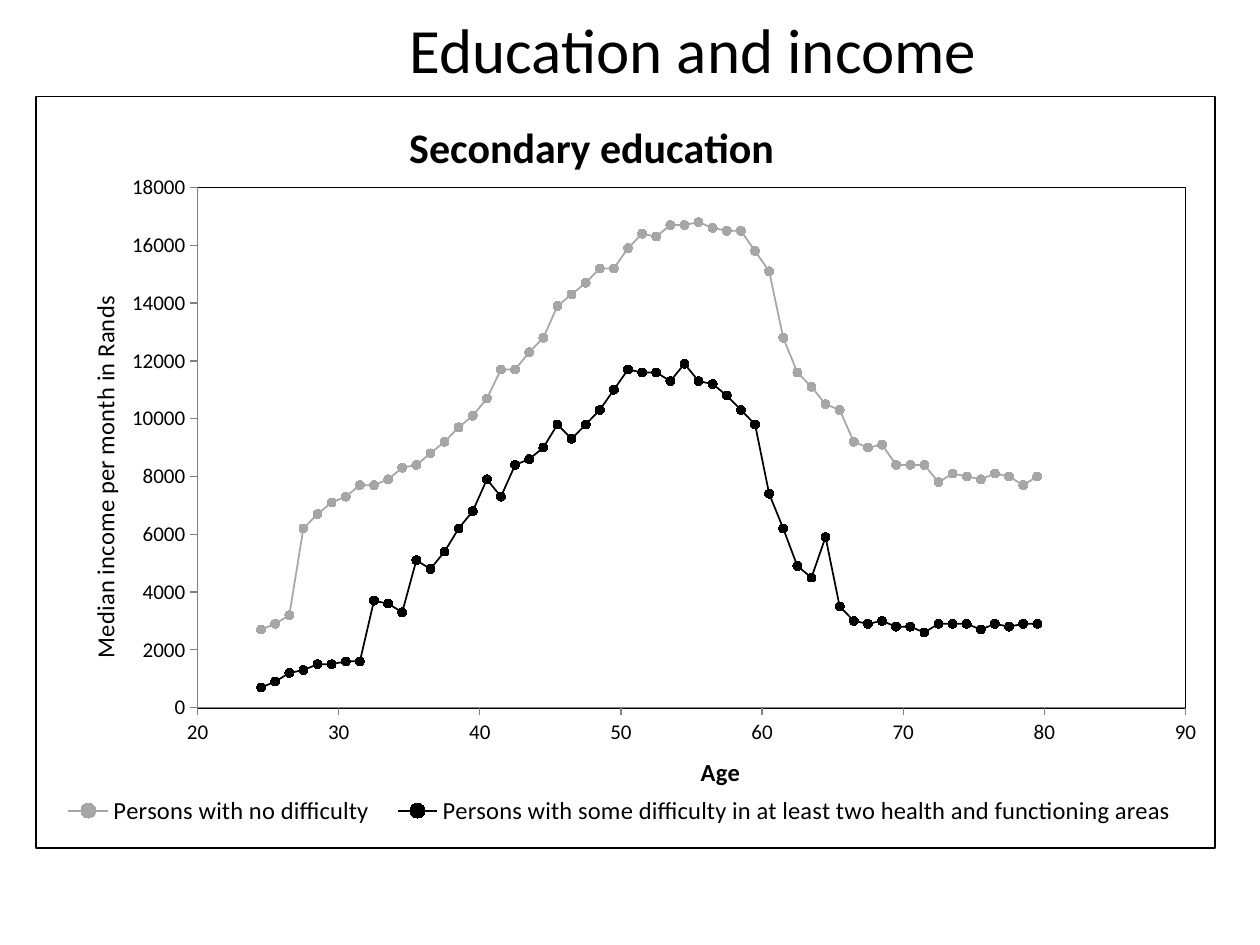
from lxml.etree import SubElement
from pptx import Presentation
from pptx.chart.data import XyChartData
from pptx.dml.color import RGBColor
from pptx.enum.chart import (XL_CHART_TYPE, XL_LEGEND_POSITION, XL_MARKER_STYLE,
                             XL_TICK_MARK)
from pptx.enum.text import MSO_ANCHOR, PP_ALIGN
from pptx.oxml import parse_xml
from pptx.oxml.ns import nsdecls, qn
from pptx.util import Inches, Pt

COLORS = {"text": "000000", "border": "000000", "axis": "808080"}
FIRST_AGE = 24.5

# Median income by age: name, colour, hundreds of Rands
SERIES = [
    ("Persons with no difficulty", "A6A6A6",
     [27, 29, 32, 62, 67, 71, 73, 77, 77, 79, 83, 84, 88, 92, 97, 101, 107, 117,
      117, 123, 128, 139, 143, 147, 152, 152, 159, 164, 163, 167, 167, 168, 166,
      165, 165, 158, 151, 128, 116, 111, 105, 103, 92, 90, 91, 84, 84, 84, 78,
      81, 80, 79, 81, 80, 77, 80]),
    ("Persons with some difficulty in at least two health and functioning areas",
     "000000",
     [7, 9, 12, 13, 15, 15, 16, 16, 37, 36, 33, 51, 48, 54, 62, 68, 79, 73, 84,
      86, 90, 98, 93, 98, 103, 110, 117, 116, 116, 113, 119, 113, 112, 108, 103,
      98, 74, 62, 49, 45, 59, 35, 30, 29, 30, 28, 28, 26, 29, 29, 29, 27, 29, 28,
      29, 29]),
]


class SlideBuilder:
    font = "Calibri"

    def __init__(self, prs):
        self.s = prs.slides.add_slide(prs.slide_layouts[5])

    def style(self, font, size, bold=False):
        font.name, font.size, font.bold = self.font, Pt(size), bold
        font.color.rgb = RGBColor.from_string(COLORS["text"])

    def add_run(self, tf, text, size, bold=False):
        p = tf.paragraphs[0]
        r = p.add_run()
        r.text = text
        self.style(r.font, size, bold)
        return p

    def title(self, text, left, top, width, height):
        sp = self.s.shapes.title
        sp.left, sp.top = Inches(left), Inches(top)
        sp.width, sp.height = Inches(width), Inches(height)
        tf = sp.text_frame
        tf.word_wrap = True
        tf.vertical_anchor = MSO_ANCHOR.MIDDLE
        self.add_run(tf, text, 36).alignment = PP_ALIGN.CENTER

    def place(self, element, index, inner=False, **fractions):
        """Set a manual layout in fractions of the chart area."""
        layout = element.find(qn("c:layout"))
        if layout is None:
            layout = parse_xml(f"<c:layout {nsdecls('c')}/>")
            element.insert(index, layout)
        manual = SubElement(layout, qn("c:manualLayout"))
        values = {"xMode": "edge", "yMode": "edge", **fractions}
        if inner:
            values = {"layoutTarget": "inner", **values}
        for tag, value in values.items():
            SubElement(manual, qn(f"c:{tag}")).set("val", str(value))

    def border(self):
        return parse_xml(
            f'<c:spPr {nsdecls("c", "a")}><a:noFill/><a:ln w="{Pt(1)}"><a:solidFill>'
            f'<a:srgbClr val="{COLORS["border"]}"/></a:solidFill></a:ln></c:spPr>')

    def axis(self, axis, text, low, high, step, x, y, bold=False):
        axis.minimum_scale, axis.maximum_scale, axis.major_unit = low, high, step
        axis.has_major_gridlines = False
        axis.major_tick_mark = XL_TICK_MARK.OUTSIDE
        axis.minor_tick_mark = XL_TICK_MARK.NONE
        axis.format.line.color.rgb = RGBColor.from_string(COLORS["axis"])
        self.style(axis.tick_labels.font, 12)
        self.add_run(axis.axis_title.text_frame, text, 14, bold)
        self.place(axis.axis_title._element, 1, x=x, y=y)

    def scatter(self, left, top, width, height):
        data = XyChartData()
        for name, _, hundreds in SERIES:
            series = data.add_series(name)
            for i, value in enumerate(hundreds):
                series.add_data_point(FIRST_AGE + i, value * 100)
        chart = self.s.shapes.add_chart(
            XL_CHART_TYPE.XY_SCATTER_LINES, Inches(left), Inches(top),
            Inches(width), Inches(height), data).chart
        self.style(chart.font, 8)
        chart.font.name = "Times New Roman"
        chart.plots[0].vary_by_categories = False

        # Lines and markers
        for series, (_, color, _) in zip(chart.plots[0].series, SERIES):
            rgb = RGBColor.from_string(color)
            series.format.line.width = Pt(1)
            series.format.line.color.rgb = rgb
            marker = series.marker
            marker.style, marker.size = XL_MARKER_STYLE.CIRCLE, 5
            marker.format.fill.solid()
            marker.format.fill.fore_color.rgb = rgb
            marker.format.line.color.rgb = rgb

        # Chart title and axes
        chart.has_title = True
        self.add_run(chart.chart_title.text_frame, "Secondary education", 24, True)
        chart.chart_title.include_in_layout = True
        self.place(chart.chart_title._element, 1, x=0.31, y=0.02)
        self.axis(chart.category_axis, "Age", 20, 90, 10, 0.56, 0.87, True)
        self.axis(chart.value_axis, "Median income per month in Rands",
                  0, 18000, 2000, 0.04, 0.26)

        # Legend
        chart.has_legend = True
        legend = chart.legend
        legend.position = XL_LEGEND_POSITION.BOTTOM
        legend.include_in_layout = False
        self.style(legend.font, 14)
        self.place(legend._element, 1, x=0.01, y=0.92, w=0.97, h=0.06)

        # Plot area and frames
        body = chart.element.find(qn("c:chart"))
        plot_area = body.find(qn("c:plotArea"))
        self.place(plot_area, 0, inner=True, x=0.137, y=0.121, w=0.838, h=0.692)
        plot_area.append(self.border())
        body.addnext(self.border())


def main():
    prs = Presentation()
    prs.slide_width, prs.slide_height = Inches(10), Inches(7.5)
    slide = SlideBuilder(prs)
    slide.title("Education and income", 1, 0, 9, 0.76)
    slide.scatter(0.28, 0.76, 9.37, 5.98)
    prs.save("out.pptx")


if __name__ == "__main__":
    main()
